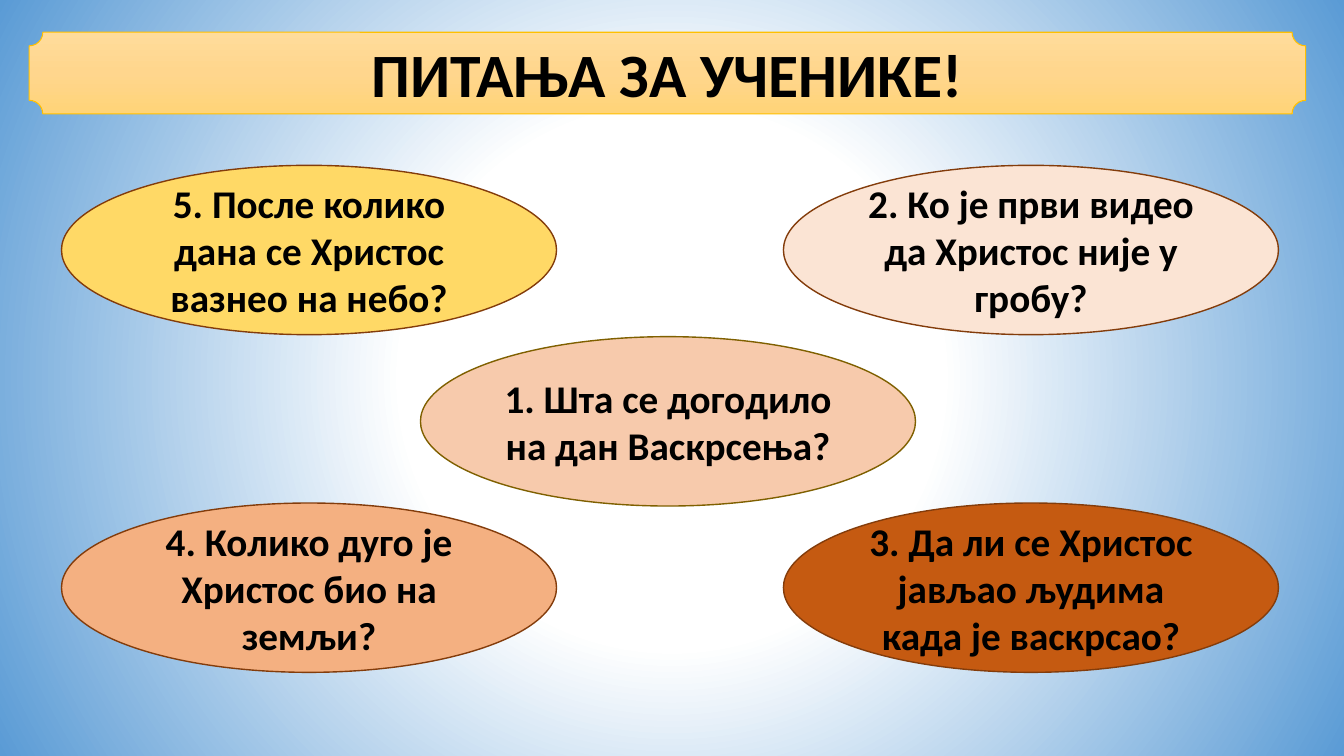
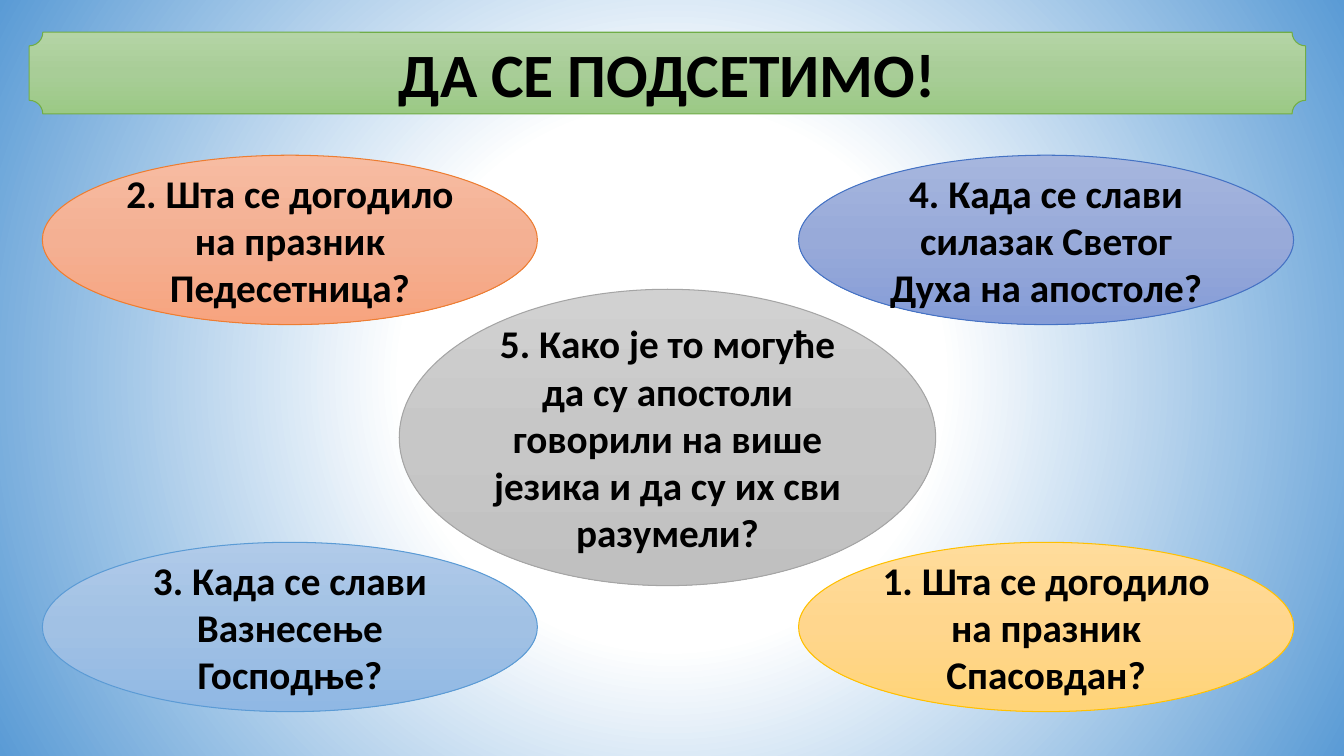
from lxml.etree import SubElement
from pptx import Presentation
from pptx.dml.color import RGBColor as RGB
from pptx.enum.shapes import MSO_SHAPE as SHAPE
from pptx.enum.text import MSO_ANCHOR as ANCHOR, PP_ALIGN as ALIGN
from pptx.oxml.ns import qn
from pptx.util import Pt

PX = 9144
WIDTH, HEIGHT = 1333, 750
OVAL_W, OVAL_H = 491, 168

COLOURS = {
    "text": "000000",
    "backdrop": "FFFFFF FFFFFF 5A9BD5",
    "gold": "FFDC9B FFD68D FFD478", "gold line": "FFC000",
    "green": "B4D4A5 A8CD97 9BC985", "green line": "70AD47",
    "orange": "F7BCA2 F4B093 F7A47F", "orange line": "ED7D31",
    "blue": "B0CAE9 A1C1E4 90B8E4", "blue line": "5B9BD5",
    "grey": "D1D1D1 C7C7C7 C0C0C0", "grey line": "A5A5A5",
    "indigo": "A6B6DE 98AAD9 859CD7", "indigo line": "4472C4",
    "peach": "F7CAAC", "peach line": "7F6000",
    "cream": "FBE4D4", "cream line": "833C0B",
    "rust": "C55A11", "rust line": "833C0B",
    "apricot": "F4B081", "apricot line": "833C0B",
    "yellow": "FFD966", "yellow line": "833C0B",
}


class Deck:
    font = "Calibri"
    title_size = 44
    question_size = 28

    def __init__(self):
        self.prs = Presentation()
        self.prs.slide_width = WIDTH * PX
        self.prs.slide_height = HEIGHT * PX

    def slide(self, title, colour):
        self.s = self.prs.slides.add_slide(self.prs.slide_layouts[6])
        fill = self.s.background.fill
        self.gradient(self.s, fill, "backdrop", middle=35, radial=True)
        self.shape(SHAPE.PLAQUE, (29, 32, 1266, 81), title, colour, self.title_size)

    def gradient(self, owner, fill, colour, middle=50, radial=False):
        fill.gradient()
        grad = owner._element.find(".//" + qn("a:gradFill"))
        grad.clear()
        grad.set("rotWithShape", "1")
        stops = SubElement(grad, qn("a:gsLst"))
        for pos, value in zip((0, middle, 100), COLOURS[colour].split()):
            stop = SubElement(stops, qn("a:gs"), pos=str(pos * 1000))
            SubElement(stop, qn("a:srgbClr"), val=value)
        if radial:
            path = SubElement(grad, qn("a:path"), path="circle")
            centre = dict.fromkeys("ltrb", "50000")
            SubElement(path, qn("a:fillToRect"), centre)
        else:
            SubElement(grad, qn("a:lin"), ang="5400000", scaled="0")

    def shape(self, kind, box, text, colour, size):
        sp = self.s.shapes.add_shape(kind, *(n * PX for n in box))
        sp.shadow.inherit = False
        shaded = " " in COLOURS[colour]
        if shaded:
            self.gradient(sp, sp.fill, colour)
        else:
            sp.fill.solid()
            sp.fill.fore_color.rgb = RGB.from_string(COLOURS[colour])
        sp.line.color.rgb = RGB.from_string(COLOURS[colour + " line"])
        sp.line.width = Pt(0.75 if shaded else 1)
        tf = sp.text_frame
        tf.word_wrap = True
        tf.vertical_anchor = ANCHOR.MIDDLE
        p = tf.paragraphs[0]
        p.text = text
        p.alignment = ALIGN.CENTER
        p.font.name = self.font
        p.font.size = Pt(size)
        p.font.bold = True
        p.font.color.rgb = RGB.from_string(COLOURS["text"])

    def question(self, x, y, text, colour, w=OVAL_W, h=OVAL_H):
        self.shape(SHAPE.OVAL, (x, y, w, h), text, colour, self.question_size)

    def corners(self, xs, ys, questions):
        places = [(x, y) for y in ys for x in xs]
        for (x, y), (text, colour) in zip(places, questions):
            self.question(x, y, text, colour)


def main():
    deck = Deck()

    deck.slide("ПИТАЊА ЗА УЧЕНИКЕ!", "gold")
    deck.question(417, 334, "1. Шта се догодило на дан Васкрсења?", "peach")
    deck.corners((61, 777), (164, 499), [
        ("5. После колико дана се Христос вазнео на небо?", "yellow"),
        ("2. Ко је први видео да Христос није у гробу?", "cream"),
        ("4. Колико дуго је Христос био на земљи?", "apricot"),
        ("3. Да ли се Христос јављао људима када је васкрсао?", "rust"),
    ])

    deck.slide("ДА СЕ ПОДСЕТИМО!", "green")
    deck.question(396, 287, "5. Како је то могуће да су апостоли говорили на више "
                  "језика и да су их сви разумели?", "grey", w=532, h=294)
    deck.corners((42, 792), (154, 538), [
        ("2. Шта се догодило на празник Педесетница?", "orange"),
        ("4. Када се слави силазак Светог Духа на апостоле?", "indigo"),
        ("3. Када се слави Вазнесење Господње?", "blue"),
        ("1. Шта се догодило на празник Спасовдан?", "gold"),
    ])

    deck.prs.save("out.pptx")


if __name__ == "__main__":
    main()
